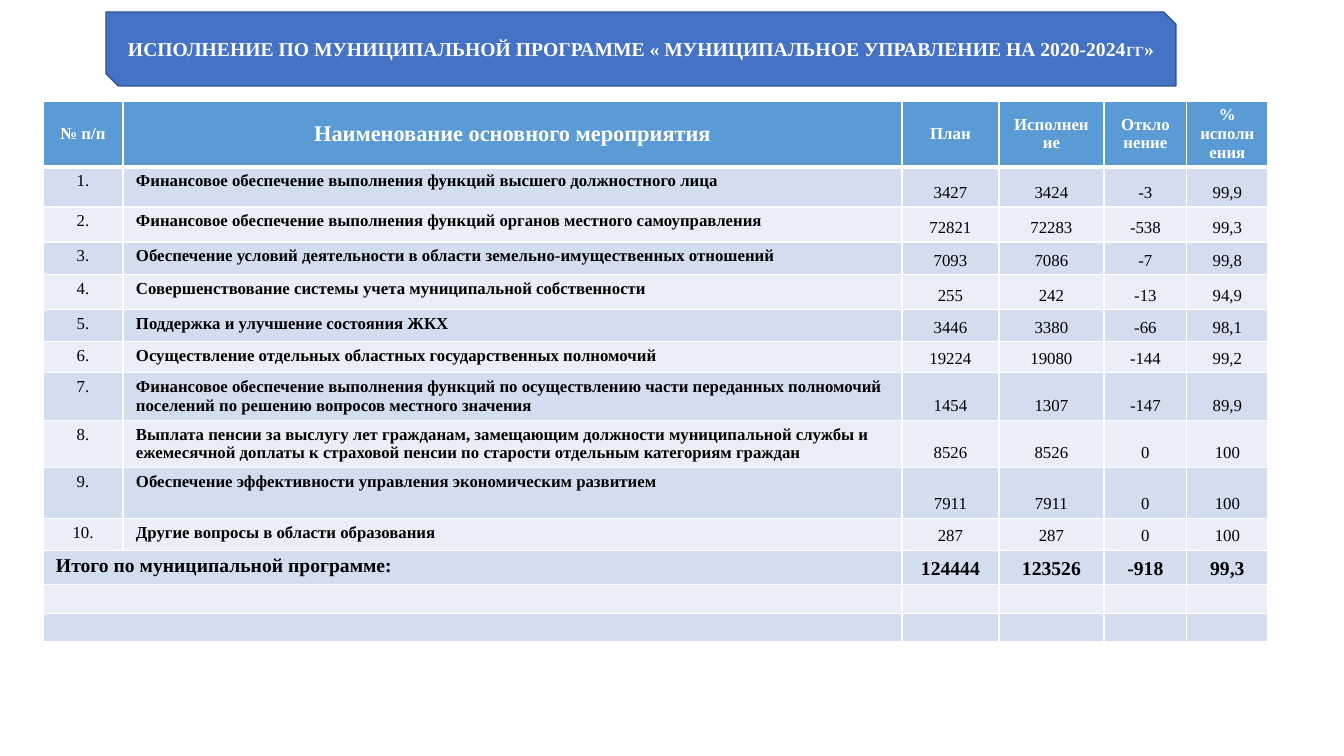
"""Builds the slide on execution of the municipal management programme."""
from lxml import etree
from pptx import Presentation
from pptx.dml.color import RGBColor
from pptx.enum.shapes import MSO_SHAPE
from pptx.enum.text import MSO_ANCHOR, PP_ALIGN
from pptx.oxml.ns import qn
from pptx.util import Pt

SNIPPED = MSO_SHAPE.SNIP_2_DIAG_RECTANGLE
TOP, MIDDLE, BOTTOM = MSO_ANCHOR.TOP, MSO_ANCHOR.MIDDLE, MSO_ANCHOR.BOTTOM
LEFT, CENTER = PP_ALIGN.LEFT, PP_ALIGN.CENTER
EMU_PER_PX = 914400 / 100.8

WHITE = RGBColor(0xFF, 0xFF, 0xFF)
BLACK = RGBColor(0x00, 0x00, 0x00)
BANNER_BLUE = RGBColor(0x44, 0x72, 0xC4)
BANNER_EDGE = RGBColor(0x32, 0x54, 0x91)
HEADER_BLUE = RGBColor(0x5B, 0x9B, 0xD5)
BANDS = (RGBColor(0xD2, 0xDE, 0xEF), RGBColor(0xEA, 0xEF, 0xF7))

FONT = "Times New Roman"
EMPTY_SIZE = 1000
TITLE = (
    ("ИСПОЛНЕНИЕ ПО МУНИЦИПАЛЬНОЙ ПРОГРАММЕ « МУНИЦИПАЛЬНОЕ УПРАВЛЕНИЕ НА 2020-2024", 14),
    ("ГГ", 10),
    ("»", 14),
)
COLUMN_WIDTHS = (80, 779, 97, 105, 83, 81)
ROW_HEIGHTS = (66, 40, 35, 33, 35, 32, 31, 47, 47, 51, 32, 34, 29, 28)
HEADINGS = ("№ п/п", "Наименование основного мероприятия", "План",
            "Исполнение", "Отклонение", "% исполнения")
ACTIVITIES = (
    ("Финансовое обеспечение выполнения функций высшего должностного лица",
     "3427", "3424", "-3", "99,9"),
    ("Финансовое обеспечение выполнения функций органов местного самоуправления",
     "72821", "72283", "-538", "99,3"),
    ("Обеспечение условий деятельности в области земельно-имущественных отношений",
     "7093", "7086", "-7", "99,8"),
    ("Совершенствование системы учета муниципальной собственности",
     "255", "242", "-13", "94,9"),
    ("Поддержка и улучшение состояния ЖКХ",
     "3446", "3380", "-66", "98,1"),
    ("Осуществление отдельных областных государственных полномочий",
     "19224", "19080", "-144", "99,2"),
    ("Финансовое обеспечение выполнения функций по осуществлению части переданных "
     "полномочий поселений по решению вопросов местного значения",
     "1454", "1307", "-147", "89,9"),
    ("Выплата пенсии за выслугу лет гражданам, замещающим должности муниципальной службы и "
     "ежемесячной доплаты к страховой пенсии по старости отдельным категориям граждан",
     "8526", "8526", "0", "100"),
    ("Обеспечение эффективности управления экономическим развитием",
     "7911", "7911", "0", "100"),
    ("Другие вопросы в области образования",
     "287", "287", "0", "100"),
)
TOTALS = ("Итого по муниципальной программе:", "", "124444", "123526", "-918", "99,3")
TOTAL_ROW = len(ACTIVITIES) + 1


def px(length):
    """Turn pixels into EMU."""
    return round(length * EMU_PER_PX)


def apply(target, values):
    """Set each attribute of the target from a dict."""
    for name, value in values.items():
        setattr(target, name, value)


def add_run(paragraph, text, size, color, bold):
    """Append a formatted run to the paragraph."""
    run = paragraph.add_run()
    run.text = text
    apply(run.font, {"name": FONT, "size": Pt(size), "bold": bold})
    run.font.color.rgb = color


def add_banner(slide):
    """Add the title banner with two snipped corners."""
    banner = slide.shapes.add_shape(SNIPPED, px(106), px(12), px(1070), px(74))
    banner.shadow.inherit = False
    banner.fill.solid()
    banner.fill.fore_color.rgb = BANNER_BLUE
    banner.line.color.rgb = BANNER_EDGE
    banner.line.width = Pt(1)
    apply(banner.text_frame, {"word_wrap": True, "vertical_anchor": MIDDLE})
    heading = banner.text_frame.paragraphs[0]
    heading.alignment = CENTER
    for text, size in TITLE:
        add_run(heading, text, size, WHITE, True)


def set_borders(cell, bottom_width, top_width):
    """Draw white borders on all sides of the cell."""
    properties = cell._tc.get_or_add_tcPr()
    widths = {"a:lnL": 1, "a:lnR": 1, "a:lnT": top_width, "a:lnB": bottom_width}
    for tag, width in widths.items():
        border = etree.SubElement(properties, qn(tag), w=str(Pt(width)))
        fill = etree.SubElement(border, qn("a:solidFill"))
        etree.SubElement(fill, qn("a:srgbClr"), val=str(WHITE))


def cell_format(row, column):
    """Return anchor, alignment, size, colour and boldness for a cell."""
    if row == 0:
        return MIDDLE, CENTER, 16 if column == 1 else 12, WHITE, True
    if row == TOTAL_ROW:
        return (BOTTOM, CENTER, 14, BLACK, True) if column else (TOP, LEFT, 14, BLACK, True)
    if column == 1:
        return TOP, LEFT, 12, BLACK, True
    return BOTTOM if column else TOP, CENTER, 12, BLACK, False


def fill_cell(cell, text, row, column):
    """Format one cell and write its text."""
    anchor, alignment, size, color, bold = cell_format(row, column)
    apply(cell, {"margin_left": px(13), "margin_right": px(13), "margin_top": px(5),
                 "margin_bottom": px(5), "vertical_anchor": anchor})
    set_borders(cell, 3 if row == 0 else 1, 3 if row == 1 else 1)
    cell.fill.solid()
    cell.fill.fore_color.rgb = BANDS[(row - 1) % 2] if row else HEADER_BLUE
    paragraph = cell.text_frame.paragraphs[0]
    paragraph.alignment = alignment
    if text:
        add_run(paragraph, text, size, color, bold)
    else:
        etree.SubElement(paragraph._p, qn("a:endParaRPr"), sz=str(EMPTY_SIZE))


def add_execution_table(slide):
    """Add the table of activities, totals and two empty rows."""
    numbered = [(f"{number}.", *activity) for number, activity in enumerate(ACTIVITIES, 1)]
    empty = ("",) * len(HEADINGS)
    rows = [HEADINGS, *numbered, TOTALS, empty, empty]
    table = slide.shapes.add_table(len(rows), len(HEADINGS), px(43), px(101),
                                   px(sum(COLUMN_WIDTHS)), px(sum(ROW_HEIGHTS))).table
    for column, width in zip(table.columns, COLUMN_WIDTHS):
        column.width = px(width)
    for index, (values, height) in enumerate(zip(rows, ROW_HEIGHTS)):
        table.rows[index].height = px(height)
        for column, text in enumerate(values):
            fill_cell(table.cell(index, column), text, index, column)
        if index >= TOTAL_ROW:
            table.cell(index, 0).merge(table.cell(index, 1))


def main():
    """Build and save the slide."""
    presentation = Presentation()
    apply(presentation, {"slide_width": px(1344), "slide_height": px(756)})
    slide = presentation.slides.add_slide(presentation.slide_layouts[6])
    add_banner(slide)
    add_execution_table(slide)
    presentation.save("out.pptx")


if __name__ == "__main__":
    main()
